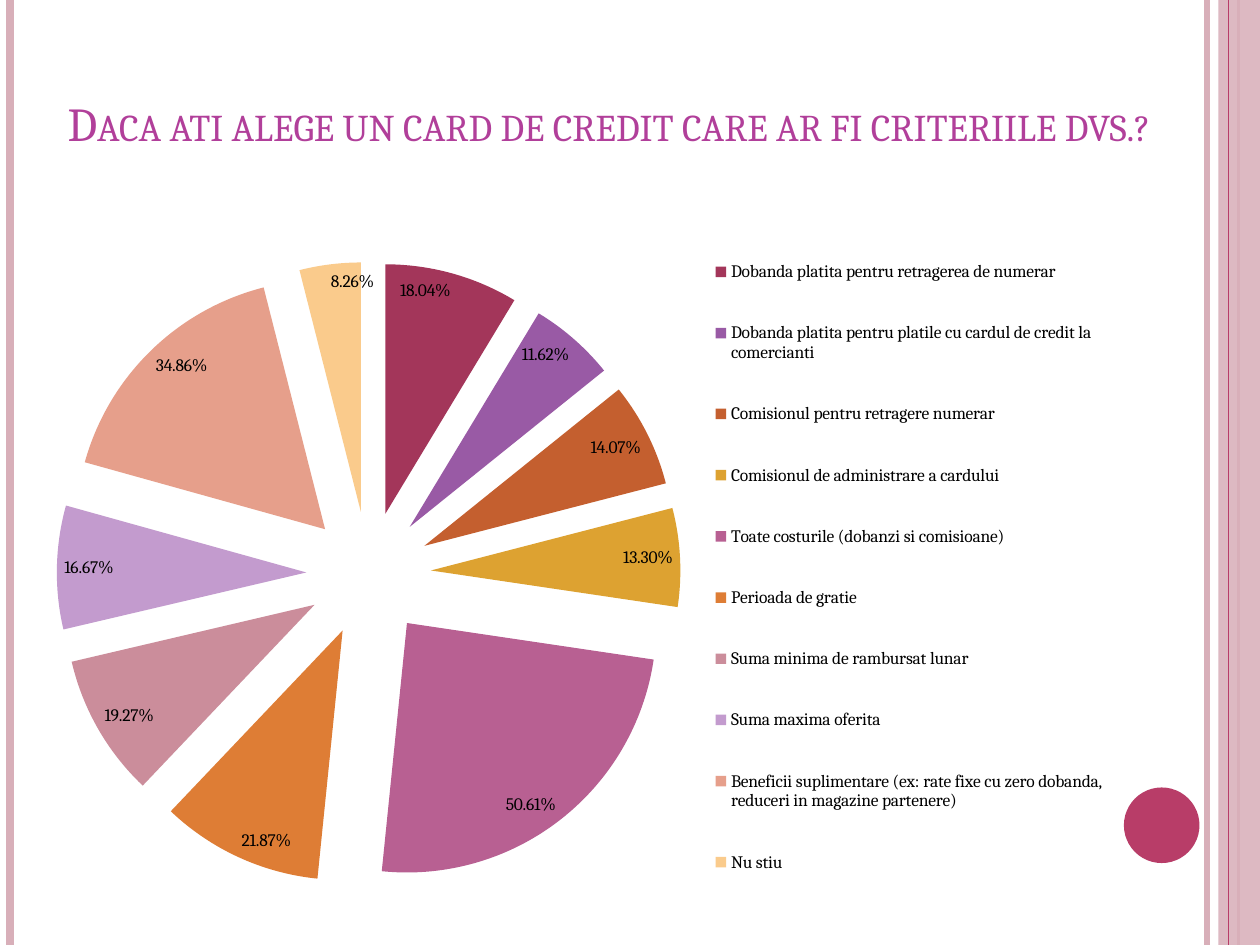
import pptx
import pptx.chart.data
import pptx.dml.color
import pptx.enum.chart
import pptx.enum.shapes
import pptx.enum.text
import pptx.oxml
import pptx.oxml.ns
import pptx.util
from pptx.util import Inches

FONT = "Cambria"
COLORS = {
    "pale rose": "D8AFB9",
    "crimson": "B83D68",
    "title": "B13F9A",
    "text": "000000",
}
# Criterion, share, slice colour
CRITERIA = [
    ("Dobanda platita pentru retragerea de numerar", 0.1804, "A3365A"),
    ("Dobanda platita pentru platile cu cardul de credit la comercianti", 0.1162, "995AA5"),
    ("Comisionul pentru retragere numerar", 0.1407, "C45F2F"),
    ("Comisionul de administrare a cardului", 0.1330, "DDA231"),
    ("Toate costurile (dobanzi si comisioane)", 0.5061, "B86092"),
    ("Perioada de gratie", 0.2187, "DE7D35"),
    ("Suma minima de rambursat lunar", 0.1927, "CB8D9B"),
    ("Suma maxima oferita", 0.1667, "C39BCE"),
    ("Beneficii suplimentare (ex: rate fixe cu zero dobanda, reduceri in magazine partenere)",
     0.3486, "E69F8B"),
    ("Nu stiu", 0.0826, "FACB8C"),
]


def rgb(color):
    return pptx.dml.color.RGBColor.from_string(color)


def write(frame, text, size, color, align, small_caps=False):
    paragraph = frame.paragraphs[0]
    paragraph.alignment = align
    run = paragraph.add_run()
    run.text = text
    run.font.name = FONT
    run.font.size = pptx.util.Pt(size)
    run.font.color.rgb = rgb(color)
    if small_caps:
        run._r.get_or_add_rPr().set("cap", "small")


deck = pptx.Presentation()
deck.slide_width, deck.slide_height = Inches(10), Inches(7.5)
slide = deck.slides.add_slide(deck.slide_layouts[5])
shapes = slide.shapes

# Side band and disc
for kind, left, top, width, height, color, alpha in [
    (pptx.enum.shapes.MSO_SHAPE.RECTANGLE, 9.67, 0, 0.33, 7.5, "pale rose", 87),
    (pptx.enum.shapes.MSO_SHAPE.OVAL, 8.92, 6.25, 0.6, 0.6, "crimson", 100),
]:
    ornament = shapes.add_shape(kind, Inches(left), Inches(top), Inches(width), Inches(height))
    ornament.shadow.inherit = False
    ornament.fill.solid()
    ornament.fill.fore_color.rgb = rgb(COLORS[color])
    ornament.line.fill.background()
    if alpha < 100:
        for fill_color in ornament.fill._xPr.iter(pptx.oxml.ns.qn("a:srgbClr")):
            pptx.oxml.ns  # namespace map holds the a: prefix
            fill_color.append(pptx.oxml.parse_xml(
                f'<a:alpha {pptx.oxml.ns.nsdecls("a")} val="{alpha * 1000}"/>'))

# Vertical rules
for x, color, weight in [
    (9.58, "pale rose", 3),
    (0.08, "pale rose", 4.5),
    (9.83, "pale rose", 1.5),
    (9.75, "crimson", 0.75),
]:
    rule = shapes.add_connector(pptx.enum.shapes.MSO_CONNECTOR.STRAIGHT,
                                Inches(x), 0, Inches(x), deck.slide_height)
    rule.line.color.rgb = rgb(COLORS[color])
    rule.line.width = pptx.util.Pt(weight)
    rule._element.spPr.append(pptx.oxml.parse_xml(
        f'<a:effectLst {pptx.oxml.ns.nsdecls("a")}/>'))

# Title
title = shapes.title
title.left, title.top, title.width, title.height = (
    Inches(0.17), Inches(0.3), Inches(9.33), Inches(0.95))
title.text_frame.vertical_anchor = pptx.enum.text.MSO_ANCHOR.BOTTOM
title.text_frame.word_wrap = True
write(title.text_frame, "Daca ati alege un card de credit care ar fi criteriile dvs.?",
      size=27, color=COLORS["title"], align=pptx.enum.text.PP_ALIGN.CENTER, small_caps=True)

# Exploded pie of the criteria
answers = pptx.chart.data.CategoryChartData(number_format="0.00%")
answers.categories = [criterion for criterion, share, color in CRITERIA]
answers.add_series("Series 1", [share for criterion, share, color in CRITERIA])
pie = shapes.add_chart(pptx.enum.chart.XL_CHART_TYPE.PIE_EXPLODED, Inches(0.17), Inches(1.75),
                       Inches(8.75), Inches(5.5), answers).chart
pie.has_title = False
pie.font.name = FONT
pie.font.size = pptx.util.Pt(10)
pie.font.color.rgb = rgb(COLORS["text"])

plot = pie.plots[0]
plot.vary_by_categories = True
for index, (criterion, share, color) in enumerate(CRITERIA):
    piece = plot.series[0].points[index].format
    piece.fill.solid()
    piece.fill.fore_color.rgb = rgb(color)
    piece.line.fill.background()
for explosion in plot.series[0]._element.iter(pptx.oxml.ns.qn("c:explosion")):
    explosion.set("val", "25")

plot.has_data_labels = True
labels = plot.data_labels
labels.show_value = True
labels.show_percentage = False
labels.number_format = "0.00%"
labels.number_format_is_linked = False
labels.position = pptx.enum.chart.XL_LABEL_POSITION.INSIDE_END

# Legend, with manual places for it and the pie
pie.has_legend = True
pie.legend.position = pptx.enum.chart.XL_LEGEND_POSITION.RIGHT
pie.legend.include_in_layout = False
plot_area = pie._chartSpace.chart.plotArea
for part, target, (x, y, w, h) in [
    (plot_area, '<c:layoutTarget val="inner"/>', (0.03, 0.06, 0.57, 0.9)),
    (pie.legend._element, "", (0.62, 0, 0.37, 1)),
]:
    for automatic in part.findall(pptx.oxml.ns.qn("c:layout")):
        part.remove(automatic)
    layout = pptx.oxml.parse_xml(
        f'<c:layout {pptx.oxml.ns.nsdecls("c")}><c:manualLayout>{target}'
        '<c:xMode val="edge"/><c:yMode val="edge"/>'
        f'<c:x val="{x}"/><c:y val="{y}"/><c:w val="{w}"/><c:h val="{h}"/>'
        '</c:manualLayout></c:layout>')
    part.insert(0 if part is plot_area else 1, layout)

deck.save("out.pptx")
